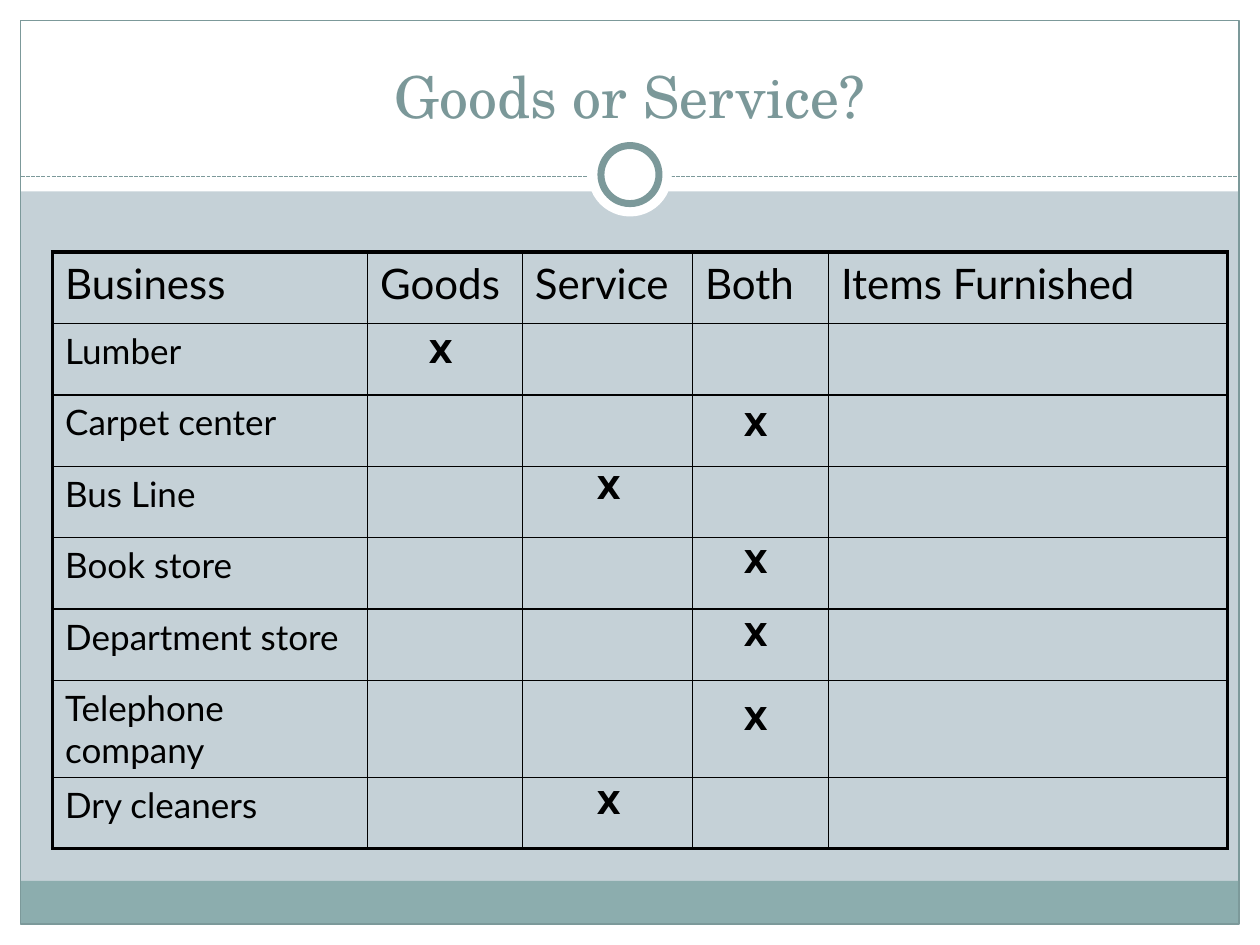
from dataclasses import dataclass

from lxml.etree import SubElement
from pptx import Presentation
from pptx.dml.color import RGBColor
from pptx.enum.dml import MSO_LINE
from pptx.enum.shapes import MSO_CONNECTOR, MSO_SHAPE
from pptx.enum.text import MSO_ANCHOR, PP_ALIGN
from pptx.oxml.ns import qn
from pptx.util import Cm, Pt


@dataclass(frozen=True)
class Theme:
    background: str = "C5D1D7"
    white: str = "FFFFFF"
    black: str = "000000"
    band: str = "8CADAE"
    line: str = "7C999A"
    title: str = "7B9899"
    title_font: str = "TeX Gyre Schola"
    body_font: str = "Lato"
    mark_font: str = "DejaVu Sans"
    title_size: float = 33
    header_size: float = 24
    body_size: float = 20
    mark_size: float = 18
    thin: float = 0.75
    ring: float = 4
    grid: float = 1
    edge: float = 2.25


WIDTH, HEIGHT, MARGIN = 25.4, 19.05, 0.42
INNER = WIDTH - 2 * MARGIN
HEADER_HEIGHT, RULE_Y, RING_Y = 3.86, 3.56, 3.52

HEADINGS = ["Business", "Goods", "Service", "Both", "Items Furnished"]
BUSINESSES = ["Lumber", "Carpet center", "Bus Line", "Book store",
              "Department store", "Telephone company", "Dry cleaners"]
COLUMN_WIDTHS = [6.35, 3.12, 3.43, 2.74, 8.05]
ROW_HEIGHT, TWO_LINE_HEIGHT = 1.44, 1.95

MARK_LEFT = {"Goods": 8.04, "Service": 11.43, "Both": 14.39}
MARKS = [("Goods", 6.56), ("Both", 8.04), ("Service", 9.31), ("Both", 10.8),
         ("Both", 12.28), ("Both", 13.97), ("Service", 15.66)]


def rgb(color):
    return RGBColor.from_string(color)


def write(tf, text, font, size, color, bold=False, align=PP_ALIGN.LEFT):
    p = tf.paragraphs[0]
    p.alignment = align
    r = p.add_run()
    r.text = text
    r.font.name, r.font.size, r.font.bold = font, Pt(size), bold
    r.font.color.rgb = rgb(color)


def set_borders(cell, color, **widths):
    """Draw the cell's sides; widths maps left, right, top and bottom to points."""
    tcPr = cell._tc.get_or_add_tcPr()
    for i, side in enumerate(("left", "right", "top", "bottom")):
        ln = tcPr.makeelement(qn(f"a:ln{side[0].upper()}"), {"w": str(Pt(widths[side]))})
        fill = SubElement(ln, qn("a:solidFill"))
        SubElement(fill, qn("a:srgbClr"), val=color)
        tcPr.insert(i, ln)


class SlideBuilder:
    def __init__(self, s, theme):
        self.s, self.theme = s, theme
        fill = s.background.fill
        fill.solid()
        fill.fore_color.rgb = rgb(theme.background)

    def shape(self, left, top, width, height, kind=MSO_SHAPE.RECTANGLE,
              fill=None, line=None, weight=None):
        sp = self.s.shapes.add_shape(kind, Cm(left), Cm(top), Cm(width), Cm(height))
        sp.shadow.inherit = False
        if fill:
            sp.fill.solid()
            sp.fill.fore_color.rgb = rgb(fill)
        else:
            sp.fill.background()
        if line:
            sp.line.color.rgb = rgb(line)
            sp.line.width = Pt(weight)
        else:
            sp.line.fill.background()

    def circle(self, diameter, center_x, center_y, **style):
        self.shape(center_x - diameter / 2, center_y - diameter / 2,
                   diameter, diameter, MSO_SHAPE.OVAL, **style)

    def dashed_rule(self, left, right, y):
        cx = self.s.shapes.add_connector(MSO_CONNECTOR.STRAIGHT,
                                         Cm(left), Cm(y), Cm(right), Cm(y))
        cx.line.color.rgb = rgb(self.theme.line)
        cx.line.width = Pt(self.theme.thin)
        cx.line.dash_style = MSO_LINE.SQUARE_DOT
        SubElement(cx._element.spPr, qn("a:effectLst"))

    def text(self, text, left, top, width, height, anchor=MSO_ANCHOR.TOP, **style):
        sp = self.s.shapes.add_textbox(Cm(left), Cm(top), Cm(width), Cm(height))
        tf = sp.text_frame
        tf.word_wrap = True
        tf.vertical_anchor = anchor
        write(tf, text, align=PP_ALIGN.CENTER, **style)

    def table(self, left, top, rows, widths, heights):
        t = self.theme
        table = self.s.shapes.add_table(len(rows), len(widths), Cm(left), Cm(top),
                                        Cm(sum(widths)), Cm(sum(heights))).table
        table.first_row = table.horz_banding = False
        for column, width in zip(table.columns, widths):
            column.width = Cm(width)
        last_row, last_col = len(rows) - 1, len(widths) - 1
        for i, (row, height) in enumerate(zip(rows, heights)):
            table.rows[i].height = Cm(height)
            for j, text in enumerate(row):
                cell = table.cell(i, j)
                cell.fill.background()
                if text:
                    write(cell.text_frame, text, t.body_font,
                          t.body_size if i else t.header_size, t.black)
                set_borders(cell, t.black,
                            left=t.grid if j else t.edge,
                            right=t.edge if j == last_col else t.grid,
                            top=t.grid if i else t.edge,
                            bottom=t.edge if i == last_row else t.grid)


def draw_frame(b):
    t = b.theme
    for box in [(0, HEIGHT - MARGIN, WIDTH, MARGIN), (0, 0, WIDTH, HEADER_HEIGHT),
                (0, 0, MARGIN, HEIGHT), (WIDTH - MARGIN, 0, MARGIN, HEIGHT)]:
        b.shape(*box, fill=t.white)
    b.shape(MARGIN, 17.76, INNER, 0.87, fill=t.band)
    b.shape(MARGIN, MARGIN, INNER, HEIGHT - 2 * MARGIN, line=t.line, weight=t.thin)
    b.dashed_rule(MARGIN, WIDTH - MARGIN, RULE_Y)
    b.circle(1.69, WIDTH / 2, RING_Y, fill=t.white)
    b.circle(1.17, WIDTH / 2, RING_Y, fill=t.white, line=t.line, weight=t.ring)


def main():
    prs = Presentation()
    prs.slide_width, prs.slide_height = Cm(WIDTH), Cm(HEIGHT)
    t = Theme()
    b = SlideBuilder(prs.slides.add_slide(prs.slide_layouts[6]), t)
    draw_frame(b)
    b.text("Goods or Service?", 0.85, 0.64, 23.7, 2.11, MSO_ANCHOR.BOTTOM,
           font=t.title_font, size=t.title_size, color=t.title)

    blanks = [""] * (len(HEADINGS) - 1)
    rows = [HEADINGS] + [[name] + blanks for name in BUSINESSES]
    heights = [TWO_LINE_HEIGHT if row[0] == "Telephone company" else ROW_HEIGHT
               for row in rows]
    b.table(1.06, 5.08, rows, COLUMN_WIDTHS, heights)
    for column, top in MARKS:
        b.text("X", MARK_LEFT[column], top, 1.69, 1.27,
               font=t.mark_font, size=t.mark_size, color=t.black, bold=True)
    prs.save("out.pptx")


if __name__ == "__main__":
    main()
